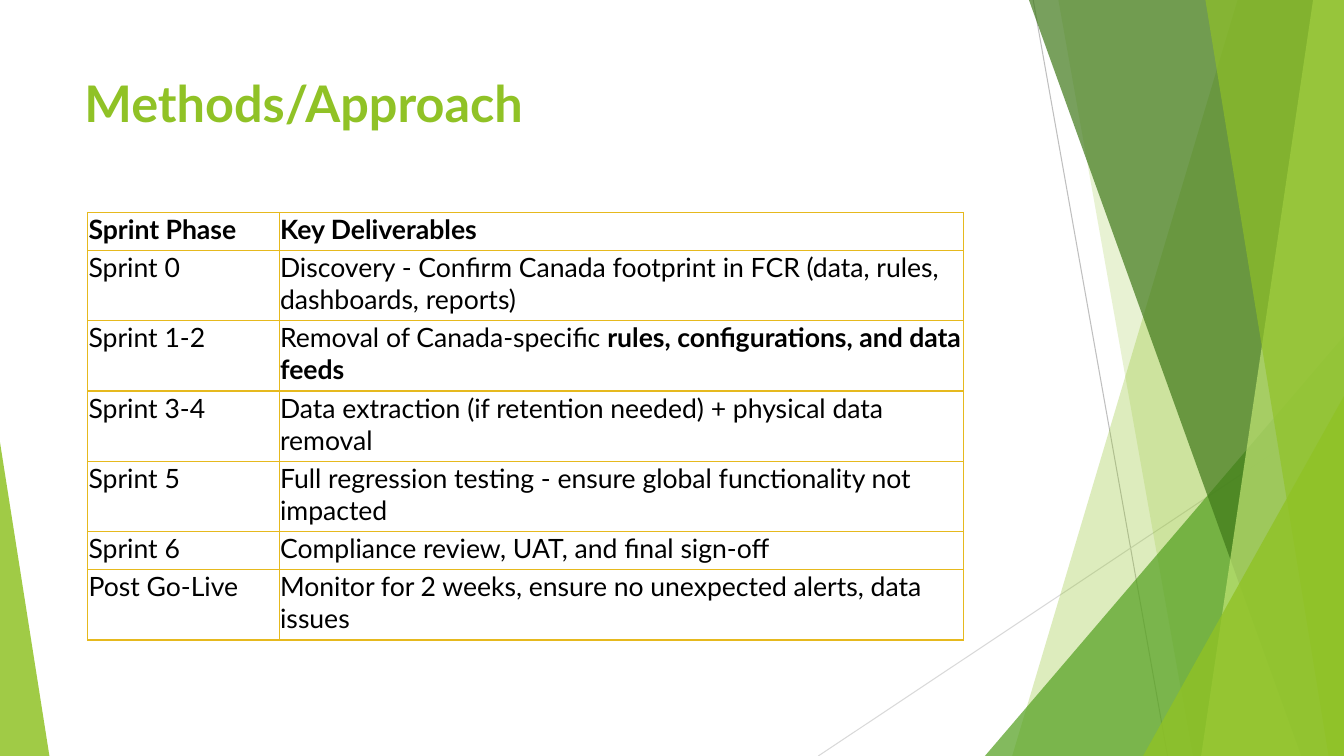
import dataclasses

import lxml.etree
import pptx
import pptx.dml.color
import pptx.enum.shapes
import pptx.oxml.ns
import pptx.util

Pt = pptx.util.Pt
qn = pptx.oxml.ns.qn
SHAPES = pptx.enum.shapes


@dataclasses.dataclass(frozen=True)
class Theme:
    font: str = "Lato"
    head: int = 36
    body: int = 19
    ink: str = "000000"
    lime: str = "90C226"
    pale: str = "C0E474"
    leaf: str = "54A021"
    pine: str = "3F7819"
    gold: str = "E6B91E"
    gray: str = "BFBFBF"
    mist: str = "D9D9D9"


def rgb(code):
    return pptx.dml.color.RGBColor.from_string(code)


class Deck:
    """Draws styled elements on the current slide, with lengths in points."""

    def __init__(self, theme, wide, high):
        self.theme, self.wide, self.high = theme, wide, high
        self.file = pptx.Presentation()
        self.file.slide_width, self.file.slide_height = Pt(wide), Pt(high)
        self.slide = self.file.slides.add_slide(self.file.slide_layouts[6])
        self.shapes = self.slide.shapes

    def style(self, run, size, color, bold=False):
        run.font.name, run.font.size, run.font.bold = self.theme.font, Pt(size), bold
        run.font.color.rgb = rgb(color)

    def paint(self, shape, color, alpha):
        shape.shadow.inherit = False
        shape.fill.solid()
        shape.fill.fore_color.rgb = rgb(color)
        shape.line.fill.background()
        tint = next(shape.element.spPr.iter(qn("a:srgbClr")))
        lxml.etree.SubElement(tint, qn("a:alpha"), val=str(alpha * 1000))

    def line(self, x1, y1, x2, y2, color):
        kind = SHAPES.MSO_CONNECTOR.STRAIGHT
        rule = self.shapes.add_connector(kind, Pt(x1), Pt(y1), Pt(x2), Pt(y2))
        rule.line.color.rgb = rgb(color)
        rule.line.width = Pt(0.75)
        lxml.etree.SubElement(rule.element.spPr, qn("a:effectLst"))

    def panel(self, top, foot, color, alpha):
        pen = self.shapes.build_freeform(Pt(top), 0)
        ends = [(self.wide, 0), (self.wide, self.high), (foot, self.high)]
        pen.add_line_segments([(Pt(x), Pt(y)) for x, y in ends], close=True)
        self.paint(pen.convert_to_shape(), color, alpha)

    def wedge(self, left, top, width, peak, color, alpha):
        kind = SHAPES.MSO_SHAPE.ISOSCELES_TRIANGLE
        shape = self.shapes.add_shape(
            kind, Pt(left), Pt(top), Pt(width), Pt(self.high - top))
        shape.adjustments[0] = peak
        self.paint(shape, color, alpha)

    def title(self, text, left, top, width, height):
        frame = self.shapes.add_textbox(Pt(left), Pt(top), Pt(width), Pt(height)).text_frame
        frame.word_wrap = True
        frame.text = text
        self.style(frame.paragraphs[0].runs[0], self.theme.head, self.theme.lime, True)

    def border(self, cell):
        props = cell._tc.get_or_add_tcPr()
        for side in ("lnL", "lnR", "lnT", "lnB"):
            edge = lxml.etree.SubElement(props, qn("a:" + side), w=str(Pt(1)))
            fill = lxml.etree.SubElement(edge, qn("a:solidFill"))
            lxml.etree.SubElement(fill, qn("a:srgbClr"), val=self.theme.gold)

    def cell(self, cell, text, head):
        self.border(cell)
        cell.fill.background()
        cell.margin_left = cell.margin_right = cell.margin_top = Pt(0.72)
        cell.margin_bottom = 0
        plain, _, strong = text.partition("|")
        cell.text_frame.text = plain
        para = cell.text_frame.paragraphs[0]
        self.style(para.runs[0], self.theme.body, self.theme.ink, head)
        if strong:
            run = para.add_run()
            run.text = strong
            self.style(run, self.theme.body, self.theme.ink, True)

    def table(self, rows, left, top, widths, heights):
        table = self.shapes.add_table(
            len(rows), len(widths), Pt(left), Pt(top),
            Pt(sum(widths)), Pt(sum(heights))).table
        table.first_row = table.horz_banding = False
        for col, width in zip(table.columns, widths):
            col.width = Pt(width)
        for row, height in zip(table.rows, heights):
            row.height = Pt(height)
        for r, texts in enumerate(rows):
            for c, text in enumerate(texts):
                self.cell(table.cell(r, c), text, r == 0)


SPRINTS = [
    ("Sprint Phase", "Key Deliverables"),
    ("Sprint 0", "Discovery - Confirm Canada footprint in FCR (data, rules, dashboards, reports)"),
    ("Sprint 1-2", "Removal of Canada-specific |rules, configurations, and data feeds"),
    ("Sprint 3-4", "Data extraction (if retention needed) + physical data removal"),
    ("Sprint 5", "Full regression testing - ensure global functionality not impacted"),
    ("Sprint 6", "Compliance review, UAT, and final sign-off"),
    ("Post Go-Live", "Monitor for 2 weeks, ensure no unexpected alerts, data issues"),
]


def main():
    theme = Theme()
    deck = Deck(theme, 960, 540)
    deck.line(738, 0, 834, 540, theme.gray)
    deck.line(960, 290, 584.5, 540, theme.mist)
    deck.panel(884, 723, theme.lime, 30)
    deck.panel(756, 852, theme.lime, 20)
    deck.wedge(703.5, 240, 256.5, 1, theme.leaf, 72)
    deck.panel(735, 929.5, theme.pine, 70)
    deck.panel(938, 858, theme.pale, 70)
    deck.panel(861, 949, theme.lime, 65)
    deck.wedge(816.5, 283, 143.5, 1, theme.lime, 80)
    deck.wedge(0, 316, 35.3, 0, theme.lime, 85)
    deck.title("Methods/Approach", 53.3, 48.2, 676.8, 103.7)
    one, two = 27, 50.3
    deck.table(SPRINTS, 62.6, 151.7, (136.8, 488.9), (one, two, two, two, two, one, two))
    deck.file.save("out.pptx")


if __name__ == "__main__":
    main()
